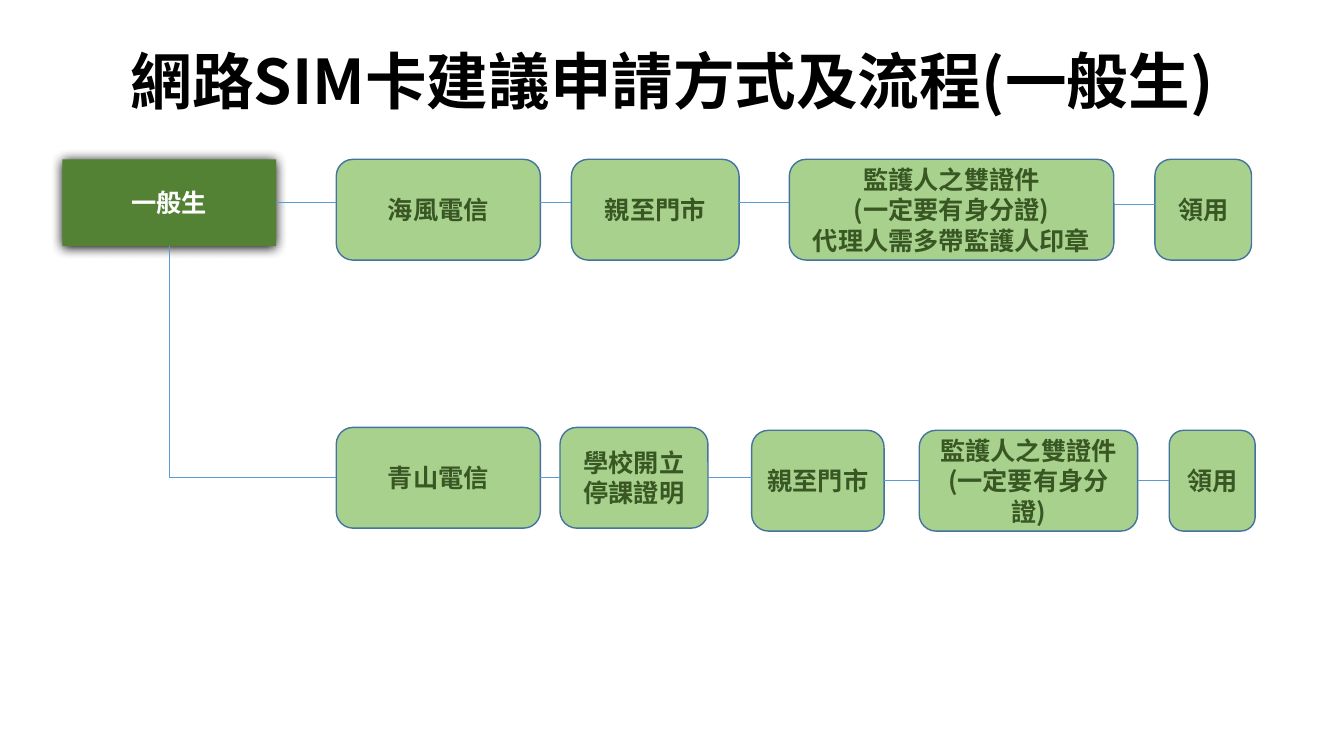
from itertools import pairwise
from lxml.etree import SubElement
from pptx import Presentation
from pptx.dml.color import RGBColor
from pptx.enum.shapes import MSO_CONNECTOR, MSO_SHAPE
from pptx.enum.text import MSO_ANCHOR, PP_ALIGN
from pptx.oxml.ns import qn
from pptx.util import Pt


def paint(code):
    return RGBColor.from_string(code)


def write(frame, text, size=18, color="385723", font="Noto Sans CJK SC", space=None):
    frame.word_wrap = True
    frame.vertical_anchor = MSO_ANCHOR.MIDDLE
    for row, line in enumerate(text.split("\n")):
        para = frame.add_paragraph() if row else frame.paragraphs[0]
        para.alignment = PP_ALIGN.CENTER
        if space:
            para.line_spacing = space
        run = para.add_run()
        run.text = line
        run.font.size = Pt(size)
        run.font.bold = True
        run.font.color.rgb = paint(color)
        run.font.name = font
        SubElement(run.font._element, qn("a:ea"), typeface=font)


class Chart:
    fill, edge, wire = "A9D18E", "43739E", "5B9BD5"

    def __init__(self, slide):
        self.shapes = slide.shapes

    def title(self, text, x, y, w, h):
        box = self.shapes.add_textbox(Pt(x), Pt(y), Pt(w), Pt(h))
        write(box.text_frame, text, size=44, color="000000", space=0.9)

    def block(self, kind, x, y, w, h, fill):
        shape = self.shapes.add_shape(kind, Pt(x), Pt(y), Pt(w), Pt(h))
        shape.shadow.inherit = False
        shape.fill.solid()
        shape.fill.fore_color.rgb = paint(fill)
        return shape

    def root(self, text, x, y, w, h):
        shape = self.block(MSO_SHAPE.RECTANGLE, x, y, w, h, "548235")
        shape.line.fill.background()
        glow = SubElement(
            shape._element.spPr.find(qn("a:effectLst")), qn("a:outerShdw"),
            blurRad=str(Pt(8.5)), dist=str(Pt(1)), dir="5400000",
            algn="ctr", rotWithShape="0")
        SubElement(glow, qn("a:srgbClr"), val="000000")
        write(shape.text_frame, text, color="FFFFFF")
        return shape

    def step(self, text, x, y, w, h=72):
        shape = self.block(MSO_SHAPE.ROUNDED_RECTANGLE, x, y, w, h, self.fill)
        shape.line.color.rgb = paint(self.edge)
        shape.line.width = Pt(1)
        write(shape.text_frame, text)
        return shape

    def link(self, kind, *ends):
        line = self.shapes.add_connector(kind, *ends)
        line.line.color.rgb = paint(self.wire)
        line.line.width = Pt(0.5)
        SubElement(line._element.spPr, qn("a:effectLst"))
        return line

    def join(self, left, right, y):
        """Level line at height y, attached where y is the middle of a side."""
        line = self.link(MSO_CONNECTOR.STRAIGHT, left.left + left.width, Pt(y),
                         right.left, Pt(y))
        if abs(left.top + left.height // 2 - Pt(y)) < Pt(0.5):
            line.begin_connect(left, 3)
        if abs(right.top + right.height // 2 - Pt(y)) < Pt(0.5):
            line.end_connect(right, 1)

    def bend(self, top, side):
        """One-corner elbow from the bottom of top to the left of side."""
        x, y = top.left + top.width // 2, top.top + top.height
        wide, high = side.left - x, side.top + side.height // 2 - y
        line = self.link(MSO_CONNECTOR.ELBOW, x, y, x + wide, y + high)
        line.begin_connect(top, 2)
        line.end_connect(side, 1)
        # The frame is turned a quarter, so its width and height swap
        line.left, line.top = x + (wide - high) // 2, y + (high - wide) // 2
        line.width, line.height = high, wide
        props = line._element.spPr
        props.find(qn("a:prstGeom")).set("prst", "bentConnector2")
        frame = props.find(qn("a:xfrm"))
        frame.set("rot", "16200000")
        frame.set("flipH", "1")


def main():
    deck = Presentation()
    deck.slide_width, deck.slide_height = Pt(960), Pt(540)
    chart = Chart(deck.slides.add_slide(deck.slide_layouts[6]))

    # Heading and starting point
    chart.title("網路SIM卡建議申請方式及流程(一般生)", 66, 28.8, 828, 63.4)
    root = chart.root("一般生", 44.6, 113.8, 152.6, 61.9)

    # Steps of both routes: text, left, top, width
    upper = [
        ("海風電信", 240.2, 113.8, 145.8),
        ("親至門市", 408.2, 113.8, 119.8),
        ("監護人之雙證件\n(一定要有身分證)\n代理人需多帶監護人印章", 563.8, 113.8, 231.8),
        ("領用", 825, 113.8, 69),
    ]
    lower = [
        ("青山電信", 240.2, 305.3, 145.8),
        ("學校開立\n停課證明", 400, 305.3, 105.7),
        ("親至門市", 536.9, 307.4, 94.6),
        ("監護人之雙證件\n(一定要有身分證)", 656.6, 307.4, 156),
        ("領用", 835.2, 307.4, 61.4),
    ]
    first = [chart.step(*item) for item in upper]
    second = [chart.step(*item) for item in lower]

    # Links along each route
    for pair, y in zip(pairwise([root] + first), (144.75, 144.75, 144.75, 145.8)):
        chart.join(*pair, y)
    for pair, y in zip(pairwise(second), (341.3, 341.3, 343.4, 343.4)):
        chart.join(*pair, y)
    chart.bend(root, second[0])

    deck.save("out.pptx")


if __name__ == "__main__":
    main()
